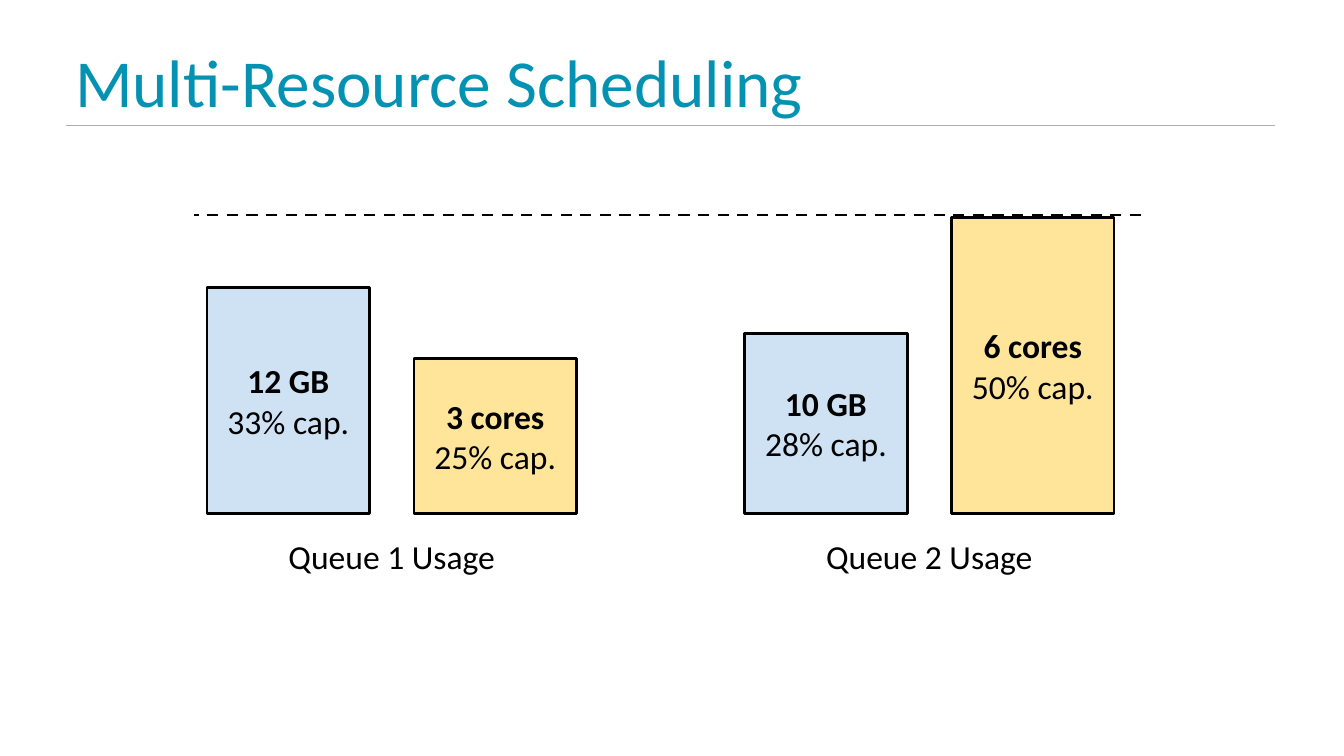
from pptx import Presentation
from pptx.dml.color import RGBColor
from pptx.enum.dml import MSO_LINE
from pptx.enum.shapes import MSO_CONNECTOR, MSO_SHAPE
from pptx.enum.text import MSO_ANCHOR, MSO_AUTO_SIZE, PP_ALIGN
from pptx.oxml.ns import qn
from pptx.util import Inches, Pt
from lxml.etree import SubElement

TITLE = "Multi-Resource Scheduling"
MEMORY, CORES = "CFE2F3", "FFE599"
QUEUES = [
    ("Queue 1 Usage", [("12 GB", "33% cap.", 1.68, MEMORY), ("3 cores", "25% cap.", 1.15, CORES)]),
    ("Queue 2 Usage", [("10 GB", "28% cap.", 1.34, MEMORY), ("6 cores", "50% cap.", 2.2, CORES)]),
]
SLIDE_WIDTH = 10
SLIDE_HEIGHT = SLIDE_WIDTH * 9 / 16
FIRST_LEFT, QUEUE_PITCH = 1.54, 4.0
BAR_WIDTH, BAR_PITCH = 1.21, 1.54
BASELINE, LABEL_TOP, LIMIT = 3.82, 3.89, 1.6


def colour(value):
    return RGBColor.from_string(value)


def write(holder, text, size=18, ink="000000", align=PP_ALIGN.CENTER, anchor=MSO_ANCHOR.TOP):
    frame = holder.text_frame
    frame.text = text
    frame.word_wrap = True
    frame.auto_size = MSO_AUTO_SIZE.NONE
    frame.vertical_anchor = anchor
    frame.margin_left = frame.margin_right = frame.margin_top = frame.margin_bottom = Inches(0.1)
    for paragraph in frame.paragraphs:
        paragraph.alignment = align
        for run in paragraph.runs:
            run.font.name = "Calibri"
            run.font.size = Pt(size)
            run.font.color.rgb = colour(ink)
    return frame.paragraphs


def rule(start, end, y, ink, width):
    line = slide.shapes.add_connector(
        MSO_CONNECTOR.STRAIGHT, Inches(start), Inches(y), Inches(end), Inches(y))
    line.line.color.rgb = colour(ink)
    line.line.width = Pt(width)
    SubElement(line._element.spPr, qn("a:effectLst"))
    return line


deck = Presentation()
deck.slide_width, deck.slide_height = Inches(SLIDE_WIDTH), Inches(SLIDE_HEIGHT)
slide = deck.slides.add_slide(deck.slide_layouts[5])

rule(0.49, 9.49, 0.93, "AEAEAE", 0.5)

title = slide.shapes.title
title.left, title.top, title.width, title.height = map(Inches, (0.46, 0.06, 9, 0.94))
heading = write(title, TITLE, 36, "0392B2", PP_ALIGN.LEFT, MSO_ANCHOR.BOTTOM)
heading[0].line_spacing = 0.8

for queue, (caption, bars) in enumerate(QUEUES):
    queue_left = FIRST_LEFT + queue * QUEUE_PITCH
    for column, (amount, share, height, fill) in enumerate(bars):
        bar = slide.shapes.add_shape(
            MSO_SHAPE.RECTANGLE, Inches(queue_left + column * BAR_PITCH),
            Inches(BASELINE - height), Inches(BAR_WIDTH), Inches(height))
        bar.shadow.inherit = False
        bar.fill.solid()
        bar.fill.fore_color.rgb = colour(fill)
        bar.line.color.rgb = colour("000000")
        bar.line.width = Pt(1.5)
        lines = write(bar, f"{amount}\n{share}", anchor=MSO_ANCHOR.MIDDLE)
        lines[0].runs[0].font.bold = True

for queue, (caption, bars) in enumerate(QUEUES):
    label = slide.shapes.add_textbox(
        Inches(FIRST_LEFT + queue * QUEUE_PITCH), Inches(LABEL_TOP),
        Inches(BAR_PITCH + BAR_WIDTH), Inches(0.38))
    write(label, caption)

limit = rule(8.49, 1.44, LIMIT, "000000", 1.5)
limit.line.dash_style = MSO_LINE.DASH

deck.save("out.pptx")
